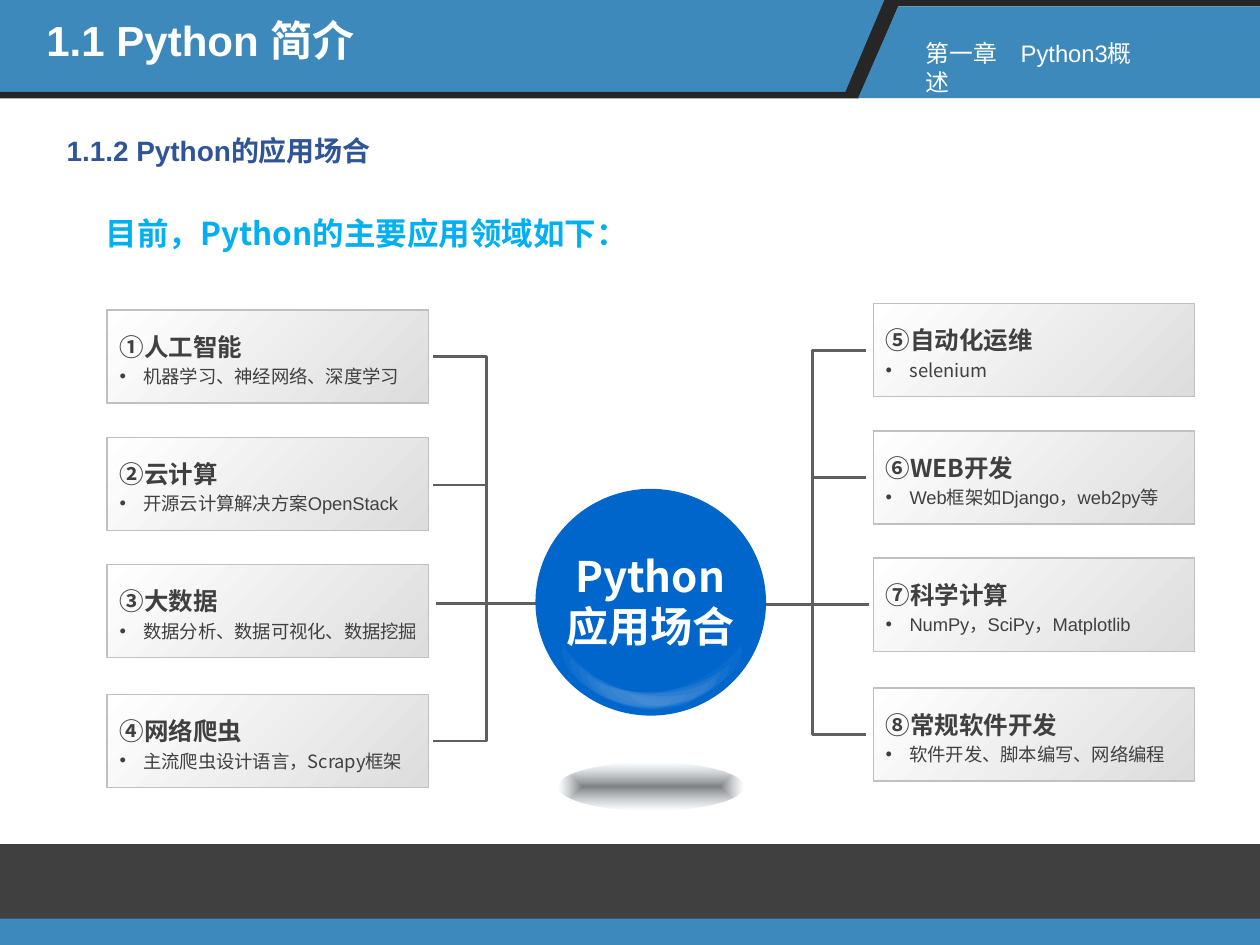
from lxml.etree import SubElement
from pptx import Presentation
from pptx.dml.color import RGBColor
from pptx.enum.shapes import MSO_CONNECTOR, MSO_SHAPE
from pptx.enum.text import MSO_ANCHOR, PP_ALIGN
from pptx.oxml import parse_xml
from pptx.oxml.ns import nsdecls, qn
from pptx.util import Inches, Pt

BLUE = RGBColor(0x3D, 0x89, 0xBC)
BLACK = RGBColor(0x26, 0x26, 0x26)
DARK = RGBColor(0x40, 0x40, 0x40)
NAVY = RGBColor(0x2F, 0x55, 0x97)
CYAN = RGBColor(0x00, 0xB0, 0xF0)
WHITE = RGBColor(0xFF, 0xFF, 0xFF)
SILVER = RGBColor(0xDD, 0xDD, 0xDD)
BORDER = RGBColor(0xC0, 0xC0, 0xC0)
GRAY = RGBColor(0x5F, 0x5F, 0x5F)
BALL = RGBColor(0x00, 0x66, 0xCC)
GLOSS = RGBColor(0xF8, 0xF8, 0xF8)
LATIN, CJK = "Arial", "Noto Sans CJK SC"

CARD_W, CARD_H = 2.55, 0.74
CARD_STEPS = (0, 1.01, 2.02, 3.05)
LEFT_CARDS = (
    ("①人工智能", "机器学习、神经网络、深度学习", LATIN),
    ("②云计算", "开源云计算解决方案OpenStack", LATIN),
    ("③大数据", "数据分析、数据可视化、数据挖掘", CJK),
    ("④网络爬虫", "主流爬虫设计语言，Scrapy框架", CJK),
)
RIGHT_CARDS = (
    ("⑤自动化运维", "selenium", CJK),
    ("⑥WEB开发", "Web框架如Django，web2py等", LATIN),
    ("⑦科学计算", "NumPy，SciPy，Matplotlib", LATIN),
    ("⑧常规软件开发", "软件开发、脚本编写、网络编程", CJK),
)
# left, top and rotation of each crescent in the ball's reflection
CRESCENTS = (
    (5.37, 4.94, 66.1), (5.22, 4.99, 79.7), (5.13, 5.01, 84.6), (5.02, 5.02, 93.5),
    (5.09, 5.02, 88.7), (4.93, 5.02, 102.2), (4.84, 4.99, 107.2), (4.74, 4.96, 116),
)


class SlideBuilder:
    def __init__(self, slide):
        self.shapes = slide.shapes
        self.line_width = Pt(1.5)

    def style_runs(self, para, size, color, font=LATIN, bold=False):
        for span in para.runs:
            span.font.size = Pt(size)
            span.font.bold = bold
            span.font.name = font
            span.font.color.rgb = color
            SubElement(span.font._element, qn("a:ea")).set("typeface", CJK)

    def shape(self, kind, left, top, width, height, color=None):
        shape = self.shapes.add_shape(
            kind, Inches(left), Inches(top), Inches(width), Inches(height))
        shape.shadow.inherit = False
        shape.line.fill.background()
        if color is not None:
            shape.fill.solid()
            shape.fill.fore_color.rgb = color
        return shape

    def outline(self, points, fill=None):
        """Draw a closed filled outline, or an open line when there is no fill."""
        points = [(Inches(x), Inches(y)) for x, y in points]
        builder = self.shapes.build_freeform(*points[0])
        builder.add_line_segments(points[1:], close=fill is not None)
        shape = builder.convert_to_shape()
        shape.shadow.inherit = False
        if fill is None:
            shape.fill.background()
            shape.line.color.rgb = GRAY
            shape.line.width = self.line_width
        else:
            shape.fill.solid()
            shape.fill.fore_color.rgb = fill
            shape.line.fill.background()

    def bracket(self, spine, tips, top, branch, stem):
        """Draw a bracket over four cards; branch and stem are (x1, x2, y)."""
        bottom = top + CARD_STEPS[-1]
        self.outline([(tips, top), (spine, top), (spine, bottom), (tips, bottom)])
        for x1, x2, y in (stem, branch):
            self.line(x1, x2, y)

    def line(self, x1, x2, y):
        line = self.shapes.add_connector(
            MSO_CONNECTOR.STRAIGHT, Inches(x1), Inches(y), Inches(x2), Inches(y))
        line.line.color.rgb = GRAY
        line.line.width = self.line_width
        SubElement(line._element.spPr, qn("a:effectLst"))

    def text(self, left, top, width, height, text, size, color,
             font=LATIN, bold=True, align=PP_ALIGN.LEFT, spacing=None, indent=0):
        box = self.shapes.add_textbox(
            Inches(left), Inches(top), Inches(width), Inches(height))
        box.text_frame.word_wrap = True
        box.text_frame.text = text
        for para in box.text_frame.paragraphs:
            para.alignment = align
            para.line_spacing = spacing
            if indent:
                para._p.get_or_add_pPr().set("marL", str(Inches(indent)))
            self.style_runs(para, size, color, font, bold)

    def card(self, left, top, title, detail, font):
        card = self.shape(MSO_SHAPE.RECTANGLE, left, top, CARD_W, CARD_H)
        card.fill.gradient()
        card.fill.gradient_angle = 315
        for stop, position, color in zip(
                card.fill.gradient_stops, (0, 1), (WHITE, SILVER)):
            stop.position = position
            stop.color.rgb = color
        card.line.color.rgb = BORDER
        card.line.width = Pt(0.75)
        frame = card.text_frame
        frame.word_wrap = False
        frame.vertical_anchor = MSO_ANCHOR.MIDDLE
        frame.text = f"{title}\n{detail}"
        heading, item = frame.paragraphs
        for para in (heading, item):
            para.alignment = PP_ALIGN.LEFT
            para.line_spacing = 1.2
        self.style_runs(heading, 14, DARK, CJK, True)
        self.style_runs(item, 10.5, DARK, font)
        props = item._p.get_or_add_pPr()
        props.set("marL", str(Inches(0.19)))
        props.set("indent", str(Inches(-0.19)))
        SubElement(props, qn("a:buFont")).set("typeface", "Arial")
        SubElement(props, qn("a:buChar")).set("char", "•")

    def crescent(self, left, top, angle):
        moon = self.shape(MSO_SHAPE.MOON, left, top, 0.23, 0.96, GLOSS)
        moon.adjustments[0] = 0.498
        moon.rotation = angle + 180
        color = moon.fill._xPr.find(f".//{qn('a:srgbClr')}")
        SubElement(color, qn("a:alpha")).set("val", "4000")

    def ground_shadow(self, left, top, width, height):
        oval = self.shape(MSO_SHAPE.OVAL, left, top, width, height)
        oval._element.spPr.find(qn("a:prstGeom")).addnext(parse_xml(
            f'<a:gradFill {nsdecls("a")} rotWithShape="1"><a:gsLst>'
            '<a:gs pos="0"><a:srgbClr val="000000"><a:alpha val="50000"/></a:srgbClr></a:gs>'
            '<a:gs pos="100000"><a:srgbClr val="445E7A"><a:alpha val="0"/></a:srgbClr></a:gs>'
            '</a:gsLst><a:path path="shape">'
            '<a:fillToRect l="50000" t="50000" r="50000" b="50000"/></a:path></a:gradFill>'))


def main():
    deck = Presentation()
    deck.slide_width, deck.slide_height = Inches(10), Inches(7.5)
    page = SlideBuilder(deck.slides.add_slide(deck.slide_layouts[6]))

    page.outline([(0, 0), (7.05, 0), (6.74, 0.73), (0, 0.73)], BLUE)
    page.outline([(7.02, 0), (10, 0), (10, 0.05), (7.13, 0.05), (6.82, 0.78),
                  (0, 0.78), (0, 0.73), (6.71, 0.73)], BLACK)
    page.outline([(7.13, 0.05), (10, 0.05), (10, 0.78), (6.81, 0.78)], BLUE)
    page.shape(MSO_SHAPE.RECTANGLE, 0, 6.7, 10, 0.6, DARK)
    page.shape(MSO_SHAPE.RECTANGLE, 0, 7.29, 10, 0.21, BLUE)

    page.text(0.43, 1.04, 7.76, 0.6, "1.1.2 Python的应用场合", 16, NAVY, spacing=0.9)
    page.text(0.27, 0.11, 4.08, 0.62, "1.1 Python 简介", 24, WHITE, spacing=0.9)

    page.bracket(3.86, 3.44, 2.83, (3.44, 3.86, 3.85), (3.46, 4.3, 4.79))
    page.bracket(6.45, 6.87, 2.78, (6.87, 6.45, 3.79), (6.9, 6.06, 4.8))
    for left, top, cards in ((6.93, 2.41, RIGHT_CARDS), (0.85, 2.46, LEFT_CARDS)):
        for step, card in zip(CARD_STEPS, cards):
            page.card(left, top + step, *card)

    page.shape(MSO_SHAPE.OVAL, 4.25, 3.88, 1.83, 1.8, BALL)
    for crescent in CRESCENTS:
        page.crescent(*crescent)
    page.ground_shadow(4.43, 6.05, 1.47, 0.38)

    page.text(0.43, 1.6, 8.08, 0.45, "目前，Python的主要应用领域如下：", 18, CYAN,
              font=CJK, spacing=Pt(25), indent=0.31)
    page.text(4.23, 4.32, 1.86, 0.91, "Python\n应用场合", 24, WHITE,
              font=CJK, align=PP_ALIGN.CENTER)
    page.text(7.25, 0.26, 2, 0.33, "第一章　Python3概述", 13.6, WHITE, bold=False)
    deck.save("out.pptx")


if __name__ == "__main__":
    main()
